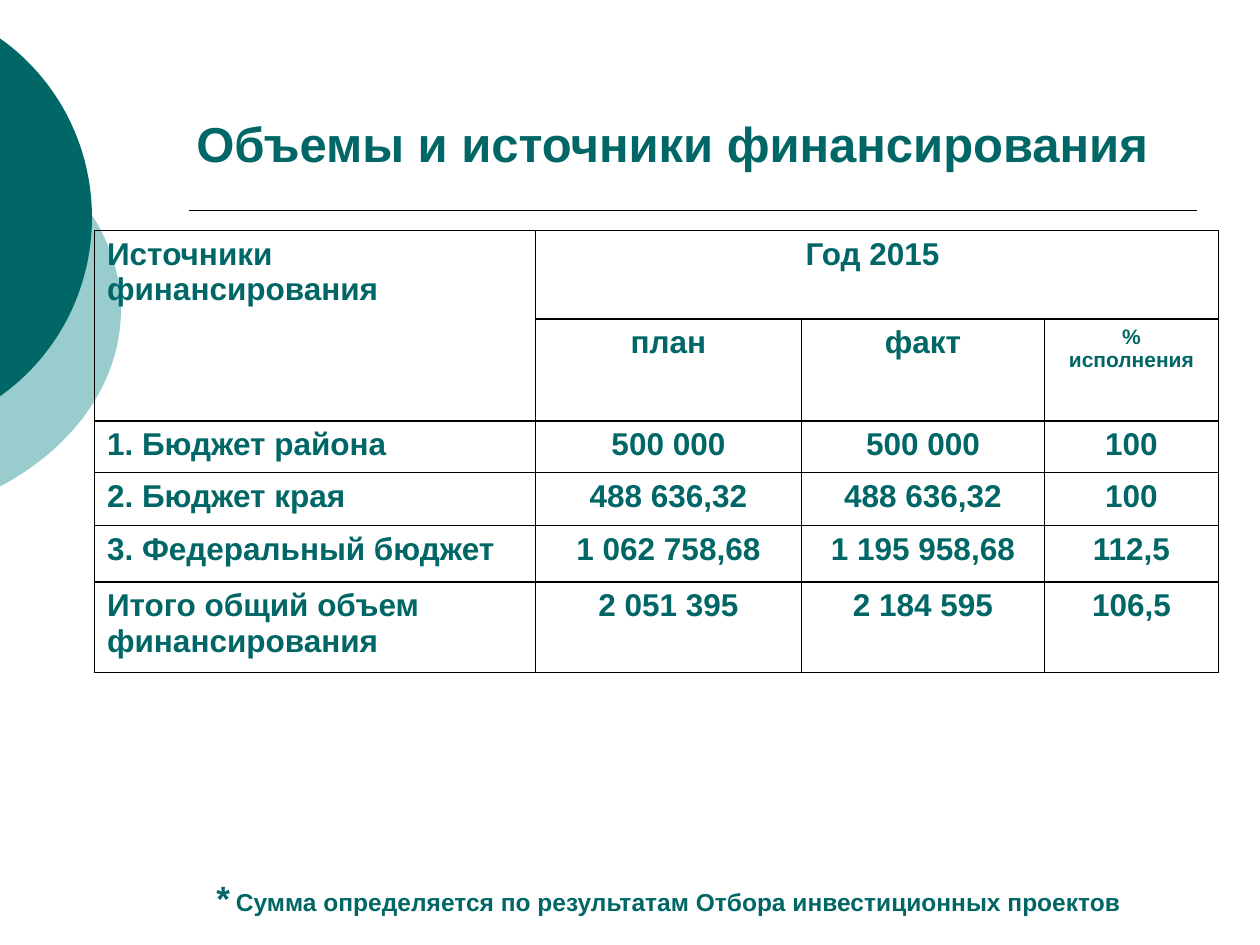
from lxml import etree
from pptx import Presentation
from pptx.dml.color import RGBColor
from pptx.enum.shapes import MSO_CONNECTOR, MSO_SHAPE
from pptx.enum.text import MSO_ANCHOR, PP_ALIGN
from pptx.oxml.ns import qn
from pptx.util import Inches, Pt

LEFT, CENTER = PP_ALIGN.LEFT, PP_ALIGN.CENTER
BOTTOM = MSO_ANCHOR.BOTTOM
STRAIGHT = MSO_CONNECTOR.STRAIGHT
OVAL = MSO_SHAPE.OVAL
TEAL, PALE, BLACK = "006666", "99CCCC", "000000"
FONT = "Arial"
HANGING = 0.38
COLUMNS = [3.5, 2.11, 1.93, 1.38]
ROWS = [0.7, 0.81, 0.41, 0.42, 0.45, 0.72]
CELLS = [
    ["Источники\nфинансирования", "Год 2015 ", "", ""],
    ["", "план", "факт", "%\nисполнения"],
    ["1. Бюджет района", "500 000", "500 000", "100"],
    ["2. Бюджет края", "488 636,32", "488 636,32", "100"],
    ["3. Федеральный бюджет", "1 062 758,68", "1 195 958,68", "112,5"],
    ["Итого общий объем\nфинансирования", "2 051 395", "2 184 595", "106,5"],
]


def color(value):
    """Turn a hex string into a colour."""
    return RGBColor.from_string(value)


def add_span(para, text, size=18, bold=True, tint=TEAL):
    """Add a formatted run to a paragraph."""
    span = para.add_run()
    span.text = text
    span.font.name = FONT
    span.font.size = Pt(size)
    span.font.bold = bold
    span.font.color.rgb = color(tint)


def add_text(page, box, spans):
    """Place one centred line of (text, size) spans at the bottom of the box."""
    frame = page.shapes.add_textbox(*map(Inches, box)).text_frame
    frame.word_wrap = True
    frame.vertical_anchor = BOTTOM
    para = frame.paragraphs[0]
    para.alignment = CENTER
    for text, size in spans:
        add_span(para, text, size=size)


def add_disc(page, box, fill):
    """Draw a plain ellipse that fills the box."""
    disc = page.shapes.add_shape(OVAL, *map(Inches, box))
    disc.shadow.inherit = False
    disc.fill.solid()
    disc.fill.fore_color.rgb = color(fill)
    disc.line.fill.background()


def add_rule(page, box):
    """Draw a thin horizontal line along the top of the box."""
    left, top, width, _ = box
    rule = page.shapes.add_connector(
        STRAIGHT, Inches(left), Inches(top), Inches(left + width), Inches(top))
    rule.line.color.rgb = color(BLACK)
    rule.line.width = Pt(1)
    etree.SubElement(rule._element.spPr, qn("a:effectLst"))


def outline_cell(cell):
    """Give a cell thin black borders and no fill."""
    properties = cell._tc.get_or_add_tcPr()
    for side in ("lnL", "lnR", "lnT", "lnB"):
        line = etree.SubElement(properties, qn("a:" + side), w=str(Pt(1)))
        fill = etree.SubElement(line, qn("a:solidFill"))
        etree.SubElement(fill, qn("a:srgbClr"), val=BLACK)
    cell.fill.background()


def fill_cell(cell, text, align):
    """Write each line of the text as a hanging paragraph of the cell."""
    size = 12 if text.startswith("%") else 18
    frame = cell.text_frame
    for index, line in enumerate(text.split("\n")):
        para = frame.add_paragraph() if index else frame.paragraphs[0]
        para.alignment = align
        properties = para._p.get_or_add_pPr()
        properties.set("marL", str(Inches(HANGING)))
        properties.set("indent", str(Inches(-HANGING)))
        add_span(para, line, size=size)


def add_funding_table(page, box):
    """Place the table of funding sources in the box."""
    table = page.shapes.add_table(
        len(ROWS), len(COLUMNS), *map(Inches, box)).table
    table.first_row = table.horz_banding = False
    for column, width in zip(table.columns, COLUMNS):
        column.width = Inches(width)
    for row, height, texts in zip(table.rows, ROWS, CELLS):
        row.height = Inches(height)
        for index, (cell, text) in enumerate(zip(row.cells, texts)):
            outline_cell(cell)
            if text:
                fill_cell(cell, text, CENTER if index else LEFT)
    table.cell(0, 0).merge(table.cell(1, 0))
    table.cell(0, 1).merge(table.cell(0, 3))


def main():
    """Build the slide and save the deck."""
    deck = Presentation()
    deck.slide_width, deck.slide_height = Inches(10), Inches(7.5)
    page = deck.slides.add_slide(deck.slide_layouts[6])
    add_disc(page, (-3.54, 0.75, 4.5, 3.42), PALE)
    add_disc(page, (-2.65, 0, 3.38, 3.45), TEAL)
    add_rule(page, (1.5, 1.67, 8, 0))
    add_text(page, (1.17, 0.75, 8.33, 0.67),
             [("Объемы и источники финансирования", 28)])
    add_funding_table(page, (0.75, 1.83, 8.92, 3.5))
    add_text(page, (1.17, 6.67, 8.33, 0.67), [
        ("*", 20), (" ", 12),
        ("Сумма определяется по результатам Отбора инвестиционных проектов ", 14)])
    deck.save("out.pptx")


if __name__ == "__main__":
    main()
